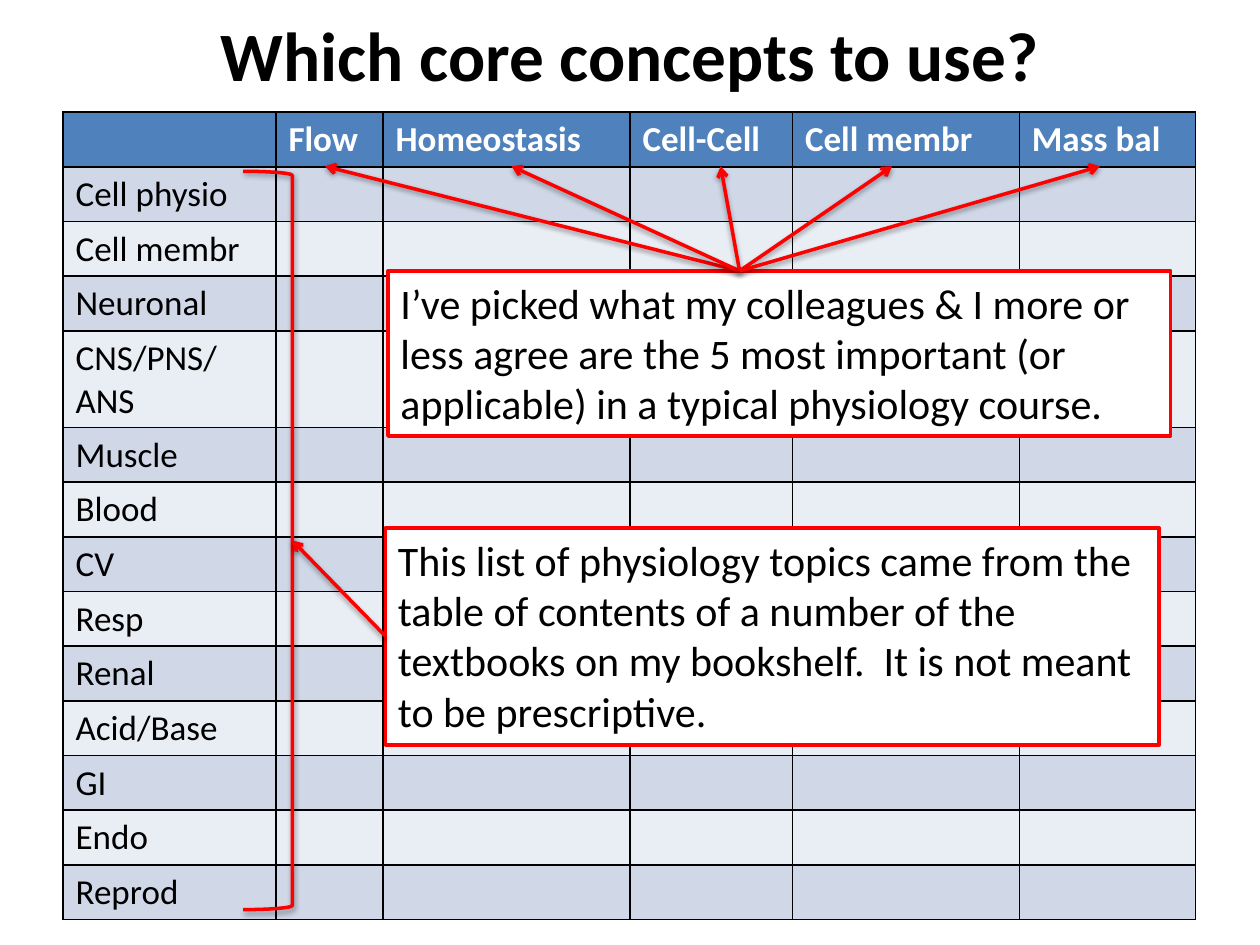
from lxml.etree import SubElement
from pptx import Presentation
from pptx.dml.color import RGBColor
from pptx.enum.shapes import MSO_CONNECTOR, MSO_SHAPE
from pptx.enum.text import MSO_ANCHOR, PP_ALIGN
from pptx.oxml.ns import qn
from pptx.util import Inches, Pt

COLS, ROWS = 100, 75  # grid of tenths of an inch
RED, BLACK, WHITE = "FF0000", "000000", "FFFFFF"
HEAD, BANDS = "4F81BD", ("D0D8E8", "E9EDF4")

TITLE = "Which core concepts to use?"
IDEAS = ["", "Flow", "Homeostasis", "Cell-Cell", "Cell membr", "Mass bal"]
WIDTHS = [16.9, 8.5, 19.6, 12.9, 18, 14]
TOPICS = ["Cell physio", "Cell membr", "Neuronal", "CNS/PNS/ANS", "Muscle",
          "Blood", "CV", "Resp", "Renal", "Acid/Base", "GI", "Endo", "Reprod"]
ROW = 4.1
PICKED = ("I’ve picked what my colleagues & I more or less agree are the 5 most "
          "important (or applicable) in a typical physiology course.")
LISTED = ("This list of physiology topics came from the table of contents of a "
          "number of the textbooks on my bookshelf.  It is not meant to be "
          "prescriptive.")
HUB = (58.7, 21.5)
TIPS = [25.8, 40.6, 57.2, 70.8, 87.3]
TIP_ROW = 13.2


def grid(*units):
    """Turn grid units into slide lengths."""
    return [Inches(u / 10) for u in units]


def color(code):
    return RGBColor.from_string(code)


def write(frame, text, size=24, ink=BLACK, bold=False, align=PP_ALIGN.LEFT,
          anchor=MSO_ANCHOR.TOP):
    frame.word_wrap = True
    frame.vertical_anchor = anchor
    par = frame.paragraphs[0]
    par.alignment = align
    run = par.add_run()
    run.text = text
    font = run.font
    font.name, font.size, font.bold = "Calibri", Pt(size), bold
    font.color.rgb = color(ink)


def shade(shape):
    """Give a shape a soft shadow that falls straight down."""
    props = shape._element.spPr
    for old in props.findall(qn("a:effectLst")):
        props.remove(old)
    glow = SubElement(SubElement(props, qn("a:effectLst")), qn("a:outerShdw"),
                      blurRad=str(Pt(3.1)), dist=str(Pt(1.6)), dir="5400000",
                      rotWithShape="0")
    tint = SubElement(glow, qn("a:srgbClr"), val=BLACK)
    SubElement(tint, qn("a:alpha"), val="38000")


def stroke(shape, width):
    shape.line.color.rgb = color(RED)
    shape.line.width = Pt(width)


def edge(cell):
    """Rule all four sides of a cell; borders must come before the fill."""
    props = cell._tc.get_or_add_tcPr()
    for side in ("a:lnL", "a:lnR", "a:lnT", "a:lnB"):
        line = SubElement(props, qn(side), w=str(Pt(1)))
        fill = SubElement(line, qn("a:solidFill"))
        SubElement(fill, qn("a:srgbClr"), val=BLACK)


def paint(cell, text, fill, ink, bold):
    edge(cell)
    cell.fill.solid()
    cell.fill.fore_color.rgb = color(fill)
    if text:
        write(cell.text_frame, text, size=20, ink=ink, bold=bold)


def matrix(slide):
    rows = [IDEAS] + [[topic] + [""] * (len(IDEAS) - 1) for topic in TOPICS]
    place = grid(5, 8.9, sum(WIDTHS), ROW * len(rows))
    table = slide.shapes.add_table(len(rows), len(IDEAS), *place).table
    for col, width in zip(table.columns, grid(*WIDTHS)):
        col.width = width
    for r, texts in enumerate(rows):
        table.rows[r].height = grid(ROW)[0]
        look = (BANDS[(r - 1) % 2], BLACK, False) if r else (HEAD, WHITE, True)
        for c, text in enumerate(texts):
            paint(table.cell(r, c), text, *look)


def title(slide):
    box = slide.shapes.add_textbox(*grid(5, 0.8, 90, 6.9))
    write(box.text_frame, TITLE, size=39.6, bold=True, align=PP_ALIGN.CENTER,
          anchor=MSO_ANCHOR.MIDDLE)


def note(slide, text, *place):
    box = slide.shapes.add_shape(MSO_SHAPE.RECTANGLE, *grid(*place))
    box.shadow.inherit = False
    box.fill.solid()
    box.fill.fore_color.rgb = color(WHITE)
    stroke(box, 2.25)
    write(box.text_frame, text)
    return box


def brace(slide, *place):
    shape = slide.shapes.add_shape(MSO_SHAPE.RIGHT_BRACKET, *grid(*place))
    shape.fill.background()
    stroke(shape, 2)
    shade(shape)


def arrow(slide, start, end):
    line = slide.shapes.add_connector(MSO_CONNECTOR.STRAIGHT, *grid(*start, *end))
    stroke(line, 2)
    SubElement(line.line._get_or_add_ln(), qn("a:tailEnd"), type="arrow")
    shade(line)
    return line


def main():
    deck = Presentation()
    deck.slide_width, deck.slide_height = grid(COLS, ROWS)
    slide = deck.slides.add_slide(deck.slide_layouts[6])
    title(slide)
    matrix(slide)
    source = note(slide, LISTED, 30.6, 41.9, 61.4, 17.2)
    brace(slide, 19.3, 13.6, 3.9, 58.6)
    arrow(slide, (30.6, 50.5), (23.2, 42.9)).begin_connect(source, 1)
    note(slide, PICKED, 30.8, 21.5, 62.1, 13.1)
    for tip in TIPS:
        arrow(slide, HUB, (tip, TIP_ROW))
    deck.save("out.pptx")


if __name__ == "__main__":
    main()
